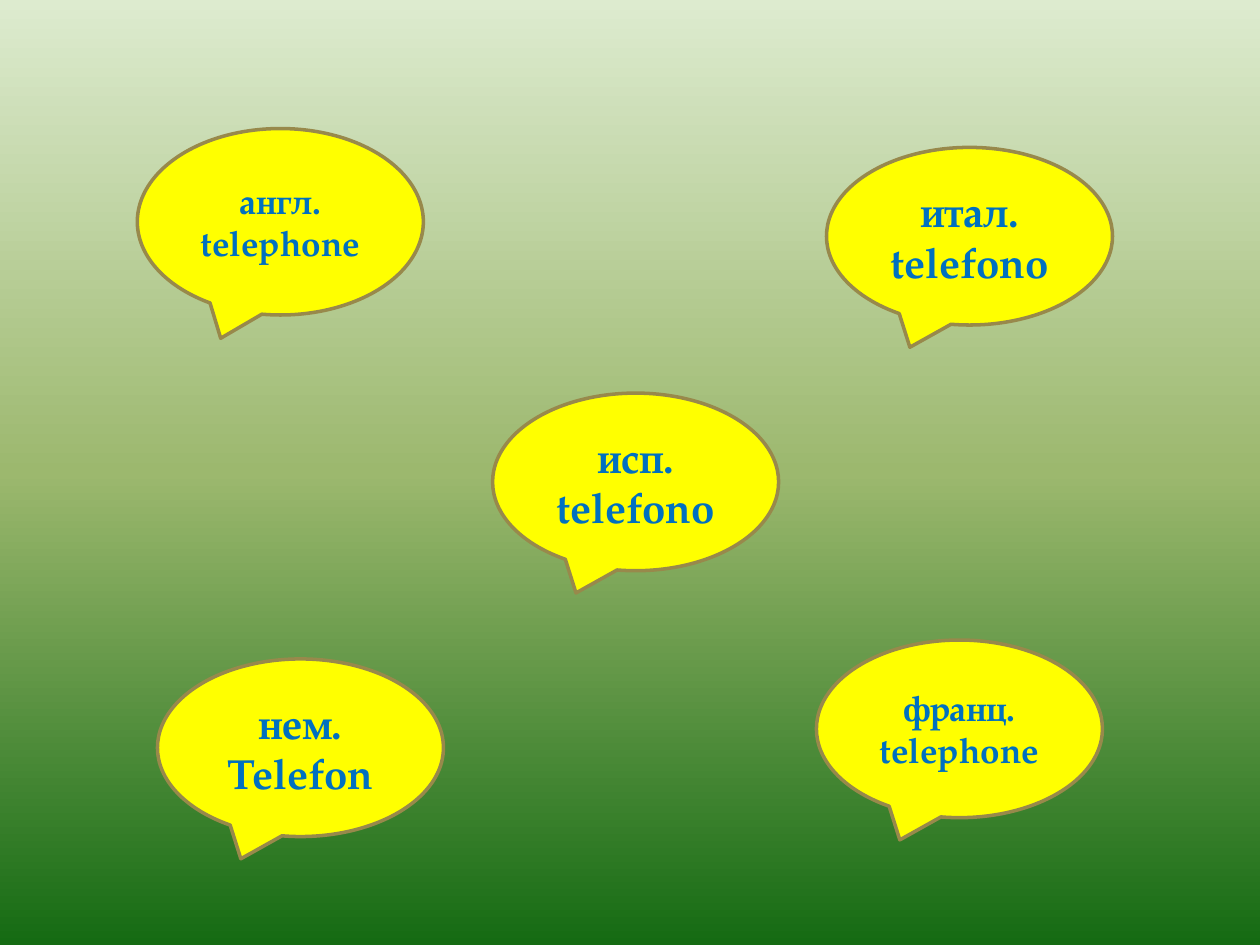
from copy import deepcopy
from dataclasses import dataclass

from pptx import Presentation
from pptx.dml.color import RGBColor
from pptx.enum.shapes import MSO_SHAPE
from pptx.enum.text import MSO_ANCHOR, PP_ALIGN
from pptx.slide import Slide
from pptx.util import Inches, Pt

COLORS = {
    "sky": "DDEBCF",
    "meadow": "9CB86E",
    "forest": "156B13",
    "bubble": "FFFF00",
    "outline": "98894B",
    "word": "0070C0",
}
FONT = "TeX Gyre Pagella"
BUBBLE_WIDTH = 2.27


@dataclass(frozen=True)
class Bubble:
    language: str
    word: str
    left: float
    top: float
    size: int = 24
    height: float = 1.41


BUBBLES = [
    Bubble("англ.", "telephone", 1.09, 1.02, size=20, height=1.48),
    Bubble("исп.", "telefono", 3.91, 3.12),
    Bubble("франц.", "telephone", 6.48, 5.08, size=20),
    Bubble("нем.", "Telefon", 1.25, 5.23),
    Bubble("итал.", "telefono", 6.56, 1.17),
]


def color(name: str) -> RGBColor:
    return RGBColor.from_string(COLORS[name])


def paint_background(slide: Slide) -> None:
    fill = slide.background.fill
    fill.gradient()
    fill.gradient_angle = 270
    first_stop = slide.element.xpath(".//a:gsLst/a:gs")[0]
    middle_stop = deepcopy(first_stop)
    middle_stop.set("pos", "50000")
    first_stop.addnext(middle_stop)
    for stop, name in zip(fill.gradient_stops, ("sky", "meadow", "forest")):
        stop.color.rgb = color(name)


def draw_bubble(slide: Slide, bubble: Bubble) -> None:
    callout = slide.shapes.add_shape(
        MSO_SHAPE.OVAL_CALLOUT,
        Inches(bubble.left),
        Inches(bubble.top),
        Inches(BUBBLE_WIDTH),
        Inches(bubble.height),
    )
    callout.shadow.inherit = False
    callout.fill.solid()
    callout.fill.fore_color.rgb = color("bubble")
    callout.line.color.rgb = color("outline")
    callout.line.width = Pt(2)

    frame = callout.text_frame
    frame.vertical_anchor = MSO_ANCHOR.MIDDLE
    frame.text = f"{bubble.language}\n{bubble.word}"
    for paragraph in frame.paragraphs:
        paragraph.alignment = PP_ALIGN.CENTER
        for run in paragraph.runs:
            run.font.name = FONT
            run.font.size = Pt(bubble.size)
            run.font.bold = True
            run.font.color.rgb = color("word")


def main() -> None:
    """Build the slide showing the word "telephone" in five languages."""
    presentation = Presentation()
    presentation.slide_width = Inches(10)
    presentation.slide_height = Inches(7.5)
    slide = presentation.slides.add_slide(presentation.slide_layouts[6])
    paint_background(slide)
    for bubble in BUBBLES:
        draw_bubble(slide, bubble)
    presentation.save("out.pptx")


if __name__ == "__main__":
    main()
